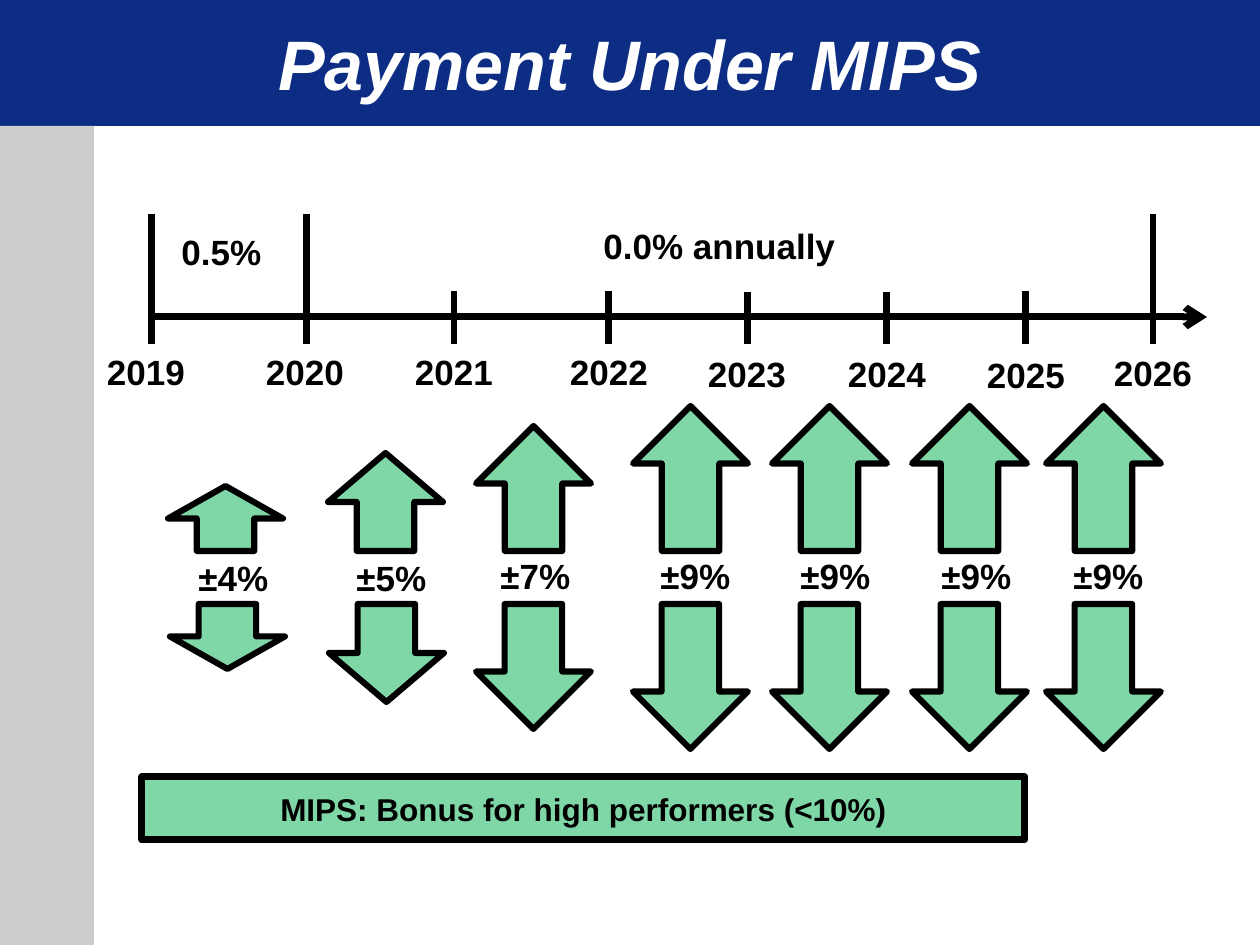
from lxml import etree
from pptx import Presentation
from pptx.dml.color import RGBColor
from pptx.enum.shapes import MSO_CONNECTOR as Connector, MSO_SHAPE as Shape
from pptx.enum.text import MSO_ANCHOR as Anchor, PP_ALIGN as Align
from pptx.oxml.ns import qn
from pptx.util import Pt

# Content
TITLE = "Payment Under MIPS"
BONUS = "MIPS: Bonus for high performers (<10%)"
UPDATES = [("0.5%", 169, 224, 139), ("0.0% annually", 591, 218, 278)]  # left, top, width
YEARS = [  # year, tick x, tick top, label centre, label top
    ("2019", 152, 214, 146, 344),
    ("2020", 307, 214, 305, 344),
    ("2021", 454, 291, 454, 344),
    ("2022", 609, 291, 609, 344),
    ("2023", 748, 292, 747, 346),
    ("2024", 887, 292, 887, 346),
    ("2025", 1026, 291, 1026, 347),
    ("2026", 1153, 214, 1153, 345),
]
RATES = [  # rate, up arrow left, down arrow left, arrow height, label left, label top
    ("±4%", 168, 170, 65, 186, 550),
    ("±5%", 328, 329, 98, 344, 550),
    ("±7%", 476, 476, 125, 488, 548),
    ("±9%", 633, 633, 145, 648, 548),
    ("±9%", 772, 772, 145, 788, 548),
    ("±9%", 912, 912, 145, 929, 548),
    ("±9%", 1046, 1046, 145, 1061, 548),
]

# Layout and colours
PX = 914400 / 126
AXIS_Y, TICK_BOTTOM = 317, 344
LABEL_W, LABEL_H, RATE_W = 139, 55, 102
ARROW_W, UP_BOTTOM, DOWN_TOP = 115, 551, 604
NAVY, GREY, GREEN, BLACK, WHITE = "0C2D83", "CCCCCC", "00B050", "000000", "FFFFFF"


def emu(*lengths):
    return [round(length * PX) for length in lengths]


def color(value):
    return RGBColor.from_string(value)


def write(box, text, size=20, fill=BLACK, align=Align.LEFT, anchor=Anchor.TOP, italic=False):
    frame = box.text_frame
    frame.word_wrap = True
    frame.vertical_anchor = anchor
    para = frame.paragraphs[0]
    para.alignment = align
    span = para.add_run()
    span.text = text
    font = span.font
    font.name, font.size, font.bold, font.italic = "Arial", Pt(size), True, italic
    font.color.rgb = color(fill)


def add_text(text, left, top, width, height=LABEL_H, **style):
    write(page.shapes.add_textbox(*emu(left, top, width, height)), text, **style)


def add_block(kind, left, top, width, height, fill, outline=None):
    block = page.shapes.add_shape(kind, *emu(left, top, width, height))
    block.shadow.inherit = False
    block.fill.solid()
    block.fill.fore_color.rgb = color(fill)
    if outline is None:
        block.line.fill.background()
    else:
        block.line.color.rgb = color(BLACK)
        block.line.width = Pt(outline)
        # Outlined blocks are half transparent
        tint = block.fill._xPr.find(qn("a:solidFill"))[0]
        etree.SubElement(tint, qn("a:alpha"), val="50000")
    return block


def add_line(x1, y1, x2, y2):
    line = page.shapes.add_connector(Connector.STRAIGHT, *emu(x1, y1, x2, y2))
    line.line.color.rgb = color(BLACK)
    line.line.width = Pt(4)
    etree.SubElement(line._element.spPr, qn("a:effectLst"))
    return line


deck = Presentation()
deck.slide_width, deck.slide_height = emu(1260, 945)
page = deck.slides.add_slide(deck.slide_layouts[6])

# Title band and side band
add_block(Shape.RECTANGLE, 0, 0, 1260, 126, NAVY)
add_block(Shape.RECTANGLE, 0, 126, 94, 819, GREY)
add_text(TITLE, 0, 0, 1260, 126, size=40, fill=WHITE, align=Align.CENTER,
         anchor=Anchor.MIDDLE, italic=True)

# Bonus bar
bar = add_block(Shape.RECTANGLE, 142, 777, 883, 63, GREEN, 4)
write(bar, BONUS, size=18, align=Align.CENTER, anchor=Anchor.MIDDLE)

# Timeline
axis = add_line(151, AXIS_Y, 1207, AXIS_Y)
etree.SubElement(axis.line._get_or_add_ln(), qn("a:tailEnd"), type="arrow")
for year, x, tick_top, centre, top in YEARS:
    add_line(x, tick_top, x, TICK_BOTTOM)
    add_text(year, centre - LABEL_W / 2, top, LABEL_W, align=Align.CENTER)
for text, left, top, width in UPDATES:
    add_text(text, left, top, width)

# Payment adjustments
for rate, up_left, down_left, height, label_left, label_top in RATES:
    up = add_block(Shape.DOWN_ARROW, up_left, UP_BOTTOM - height, ARROW_W, height, GREEN, 3.5)
    up.rotation = 180
    down = add_block(Shape.DOWN_ARROW, down_left, DOWN_TOP, ARROW_W, height, GREEN, 3.5)
    for arrow in (up, down):
        etree.SubElement(arrow.line._get_or_add_ln(), qn("a:round"))
    add_text(rate, label_left, label_top, RATE_W)

deck.save("out.pptx")
